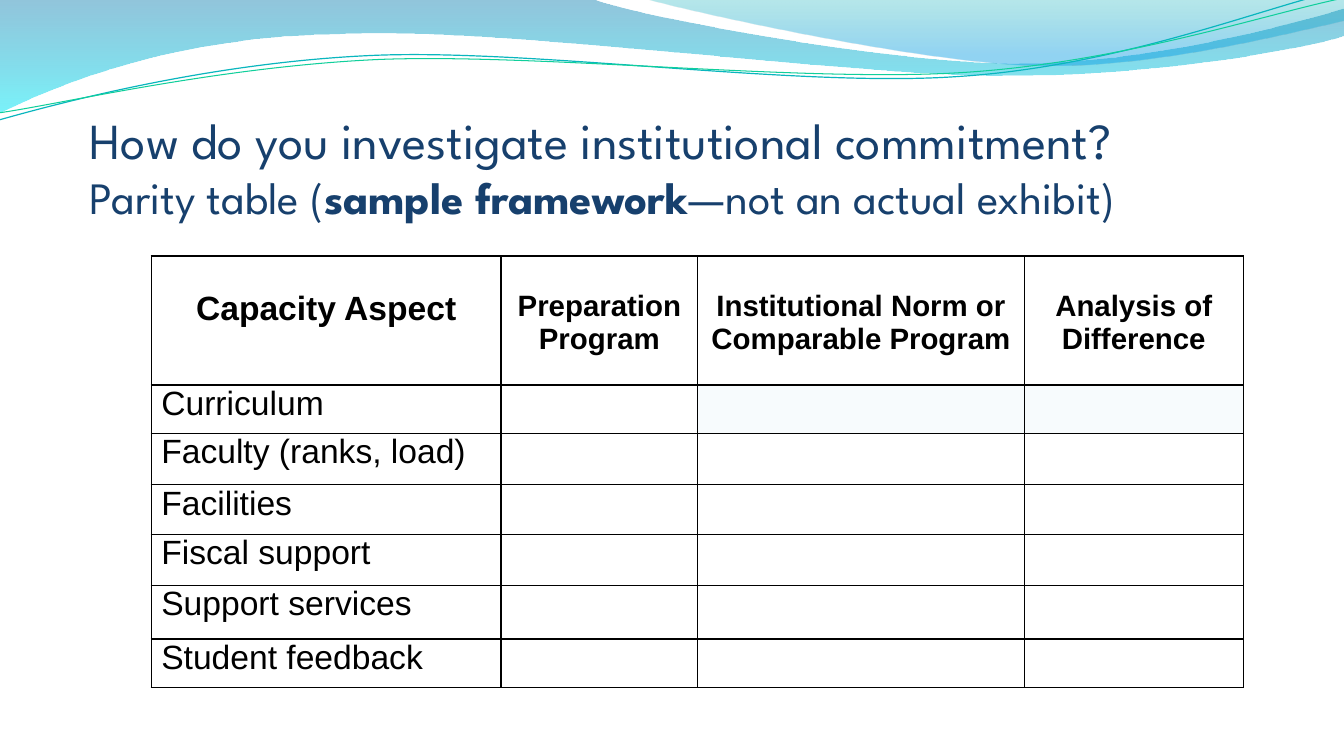
from dataclasses import dataclass

import lxml.etree
import pptx
import pptx.dml.color
import pptx.enum.text
import pptx.oxml.ns
import pptx.util

Inches = pptx.util.Inches
Pt = pptx.util.Pt
qn = pptx.oxml.ns.qn
Point = tuple[float, float]

COLORS = {
    "navy": "17406D", "black": "000000", "white": "FFFFFF", "tint": "F7FBFD",
    "steel": "0079AD", "aqua": "00E9F7", "teal": "00ABB4", "sky": "0099E4",
    "turquoise": "09B6BE", "green": "10CF9B",
}


@dataclass
class Stop:
    color: str
    position: float
    alpha: int  # percent


@dataclass
class Wave:
    """Segments hold one point for a line, or three for a cubic curve."""
    start: Point
    segments: list[tuple[Point, ...]]
    stops: tuple[Stop, ...] = ()
    line_color: str = ""
    line_width: float = 0


WAVES = [
    Wave((0, 0), [
        ((5.87, -0.01),),
        ((6.34, 0.17), (8.84, 0.63), (10.11, 0.63)),
        ((11.37, 0.63), (12.77, 0.26), (13.33, 0.09)),
        ((13.34, 0.36),),
        ((13.11, 0.44), (11.59, 0.76), (9.94, 0.75)),
        ((8.29, 0.75), (5.09, 0.28), (3.43, 0.34)),
        ((1.72, 0.36), (0.61, 0.83), (-0.02, 1.13)),
    ], stops=(Stop("steel", 0, 43), Stop("aqua", 1, 53))),
    Wave((6.38, -0.01), [
        ((6.79, 0.11), (9.09, 0.62), (10.25, 0.65)),
        ((11.4, 0.69), (12.82, 0.32), (13.33, 0.21)),
        ((13.33, 0),),
    ], stops=(Stop("teal", 0, 28), Stop("sky", 0.8, 43))),
    Wave((-0.01, 1.19), [
        ((0.63, 1.01), (2.1, 0.62), (3.69, 0.55)),
        ((5.27, 0.48), (7.89, 0.87), (9.49, 0.76)),
        ((11.1, 0.66), (12.51, 0.08), (13.3, -0.1)),
    ], line_color="turquoise", line_width=0.85),
    Wave((-0.01, 1.12), [
        ((0.62, 1.03), (2.18, 0.66), (3.77, 0.59)),
        ((5.37, 0.53), (7.96, 0.82), (9.55, 0.72)),
        ((11.14, 0.62), (12.55, 0.14), (13.33, -0.02)),
    ], line_color="green", line_width=0.75),
]

HEADERS = ["Capacity Aspect", "Preparation Program",
           "Institutional Norm or Comparable Program", "Analysis of Difference"]
ASPECTS = ["Curriculum", "Faculty (ranks, load)", "Facilities",
           "Fiscal support", "Support services", "Student feedback"]
COL_WIDTHS = [3.47, 1.95, 3.24, 2.17]
ROW_HEIGHTS = [1.28, 0.48, 0.51, 0.49, 0.51, 0.53, 0.48]


def rgb(name: str) -> pptx.dml.color.RGBColor:
    return pptx.dml.color.RGBColor.from_string(COLORS[name])


def bend_segments(sp, segments: list[tuple[Point, ...]]) -> None:
    """Join each run of three line points into one cubic curve."""
    lines = iter(list(sp.element.spPr.iter(qn("a:lnTo"))))
    for segment in segments:
        group = [next(lines) for _ in segment]
        if len(group) == 3:
            curve = lxml.etree.Element(qn("a:cubicBezTo"))
            group[0].addprevious(curve)
            for line in group:
                curve.append(line[0])
                line.getparent().remove(line)


def add_wave(slide, wave: Wave) -> None:
    points = [(Inches(x), Inches(y)) for segment in wave.segments for x, y in segment]
    builder = slide.shapes.build_freeform(*map(Inches, wave.start))
    builder.add_line_segments(points, close=False)
    if wave.stops:
        builder.add_line_segments([], close=True)
    sp = builder.convert_to_shape()
    bend_segments(sp, wave.segments)
    sp.shadow.inherit = False
    if not wave.stops:
        sp.fill.background()
        sp.line.color.rgb = rgb(wave.line_color)
        sp.line.width = Pt(wave.line_width)
        return
    sp.line.fill.background()
    sp.fill.gradient()
    sp.fill.gradient_angle = 270  # first stop at the top
    for gradient_stop, stop in zip(sp.fill.gradient_stops, wave.stops):
        gradient_stop.color.rgb = rgb(stop.color)
        gradient_stop.position = stop.position
    for clr, stop in zip(sp.element.spPr.iter(qn("a:srgbClr")), wave.stops):
        lxml.etree.SubElement(clr, qn("a:alpha"), val=str(stop.alpha * 1000))


def add_title(slide) -> None:
    sp = slide.shapes.title
    sp.left, sp.top, sp.width, sp.height = map(Inches, (0.89, 0.97, 12.23, 1.25))
    tf = sp.text_frame
    tf.word_wrap = True
    tf.auto_size = pptx.enum.text.MSO_AUTO_SIZE.NONE
    tf.vertical_anchor = pptx.enum.text.MSO_ANCHOR.BOTTOM
    tf.margin_left = tf.margin_right = tf.margin_bottom = 0
    tf.margin_top = Inches(0.05)
    p = tf.paragraphs[0]
    p.alignment = pptx.enum.text.PP_ALIGN.LEFT
    p.font.name = "League Spartan"
    p.font.size = Pt(36)
    p.font.color.rgb = rgb("navy")
    p.add_run().text = "How do you investigate institutional commitment?"
    p.add_line_break()
    for text, bold in (("Parity table (", False), ("sample framework", True),
                       ("—not an actual exhibit)", False)):
        r = p.add_run()
        r.text = text
        r.font.size = Pt(32)
        r.font.bold = bold


def add_borders(cell) -> None:
    tc_pr = cell._tc.get_or_add_tcPr()
    for side in ("a:lnL", "a:lnR", "a:lnT", "a:lnB"):
        ln = lxml.etree.SubElement(tc_pr, qn(side), w=str(Pt(1)))
        fill = lxml.etree.SubElement(ln, qn("a:solidFill"))
        lxml.etree.SubElement(fill, qn("a:srgbClr"), val=COLORS["black"])


def format_cell(cell, text: str, size: float, header: bool, fill: str) -> None:
    add_borders(cell)
    if header:
        cell.fill.background()
    else:
        cell.fill.solid()
        cell.fill.fore_color.rgb = rgb(fill)
    cell.margin_left = cell.margin_right = Inches(0.1)
    cell.margin_top = Inches(0.34 if header else 0)
    cell.margin_bottom = 0
    if not text:
        return
    p = cell.text_frame.paragraphs[0]
    if header:
        p.alignment = pptx.enum.text.PP_ALIGN.CENTER
    p.font.name = "Arial"
    p.font.size = Pt(size)
    p.font.bold = header
    p.font.color.rgb = rgb("black")
    p.add_run().text = text


def add_parity_table(slide) -> None:
    rows = [HEADERS] + [[aspect, "", "", ""] for aspect in ASPECTS]
    table = slide.shapes.add_table(
        len(rows), len(HEADERS), Inches(1.5), Inches(2.54),
        Inches(sum(COL_WIDTHS)), Inches(sum(ROW_HEIGHTS))).table
    table.first_row = table.horz_banding = False
    for column, width in zip(table.columns, COL_WIDTHS):
        column.width = Inches(width)
    for i, (row, height) in enumerate(zip(table.rows, ROW_HEIGHTS)):
        row.height = Inches(height)
        for j, cell in enumerate(row.cells):
            header = i == 0
            size = 21 if header and j > 0 else 24
            fill = "tint" if i == 1 and j >= 2 else "white"
            format_cell(cell, rows[i][j], size, header, fill)


def main() -> None:
    prs = pptx.Presentation()
    prs.slide_width, prs.slide_height = Inches(13.33), Inches(7.5)
    slide = prs.slides.add_slide(prs.slide_layouts[5])
    # Decorative waves along the top
    for wave in WAVES:
        add_wave(slide, wave)
    # Heading and table
    add_title(slide)
    add_parity_table(slide)
    prs.save("out.pptx")


if __name__ == "__main__":
    main()
